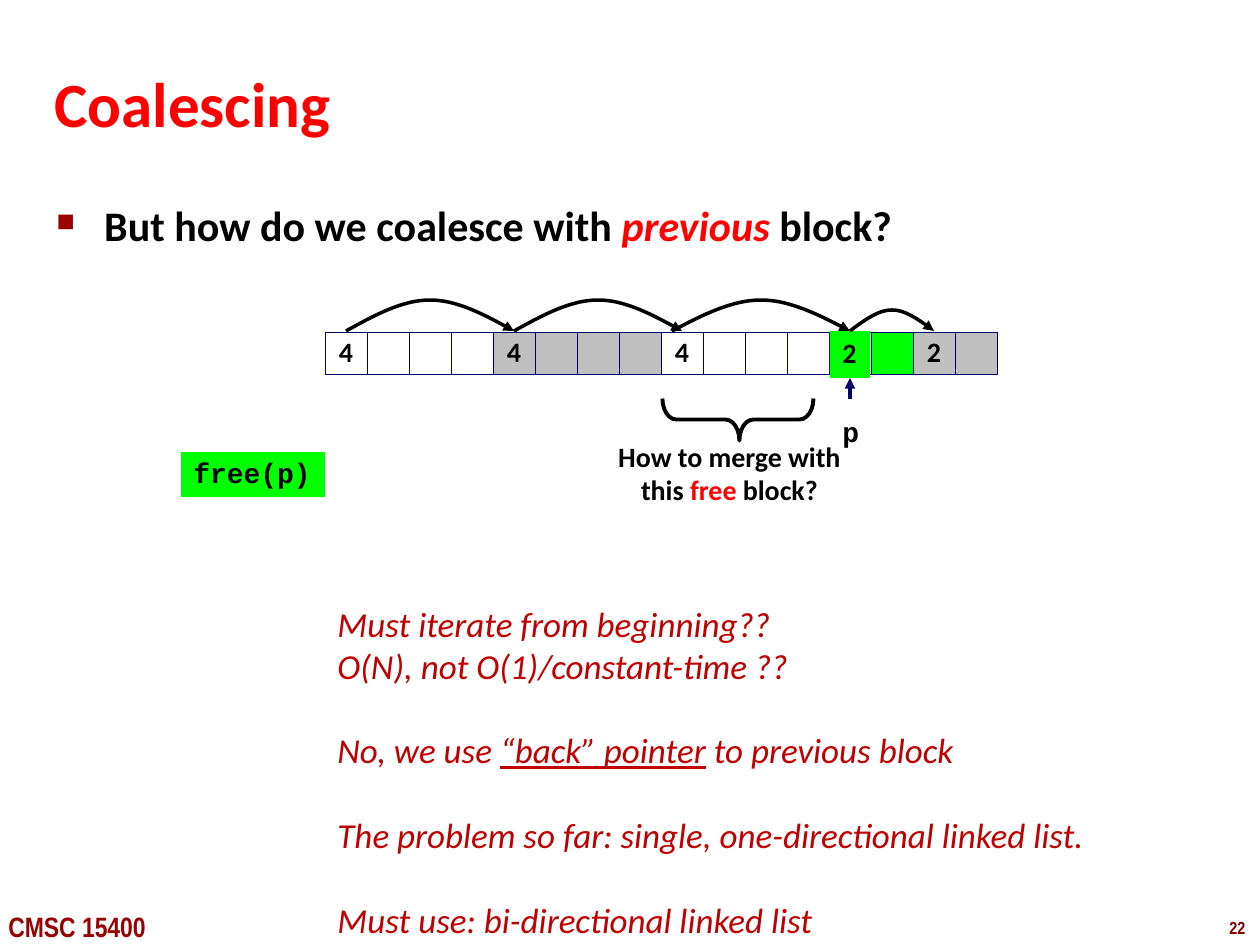
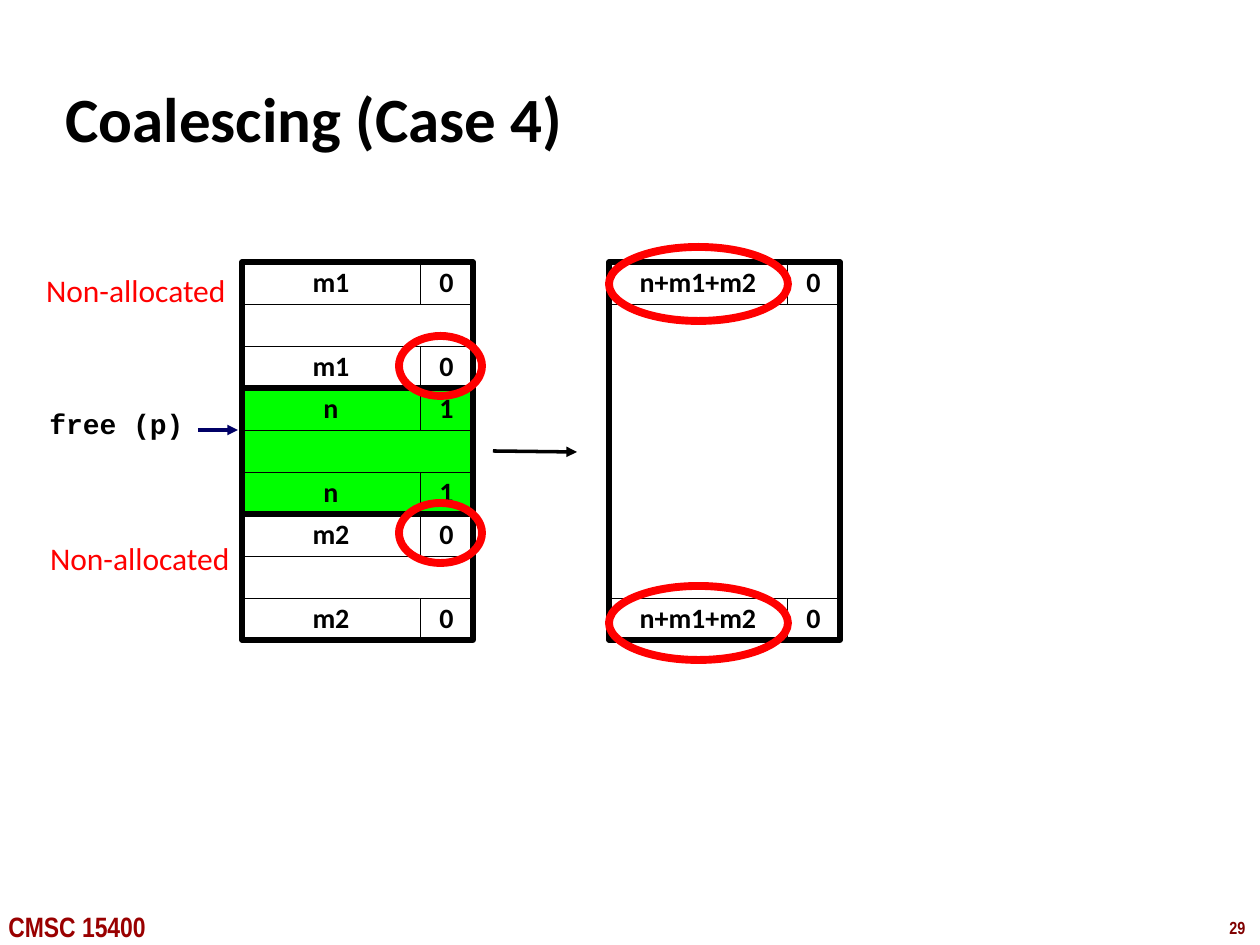
from typing import NamedTuple

from lxml import etree
from pptx import Presentation
from pptx import util as u
from pptx.dml.color import RGBColor
from pptx.enum import shapes as es
from pptx.enum import text as et
from pptx.oxml import ns

PX = u.Inches(1) / 126

BLACK = RGBColor(0, 0, 0)
WHITE = RGBColor(255, 255, 255)
RED = RGBColor(255, 0, 0)
GREEN = RGBColor(0, 255, 0)
GREY = RGBColor(0xBF, 0xBF, 0xBF)
SILVER = RGBColor(0xC0, 0xC0, 0xC0)
NAVY = RGBColor(0, 0, 0x66)
BRICK = RGBColor(0xC0, 0, 0)
MAROON = RGBColor(0x99, 0, 0)
WINE = RGBColor(0x80, 0, 0)

LEFT, MID, RIGHT = et.PP_ALIGN.LEFT, et.PP_ALIGN.CENTER, et.PP_ALIGN.RIGHT
RECT, OVAL = es.MSO_SHAPE.RECTANGLE, es.MSO_SHAPE.OVAL


class Box(NamedTuple):
    x: int
    y: int
    w: int
    h: int


class Style(NamedTuple):
    size: int
    font: str = "Calibri"
    color: RGBColor = BLACK
    bold: bool = False
    italic: bool = False
    under: bool = False


class Run(NamedTuple):
    text: str
    style: Style


class Para(NamedTuple):
    runs: list[Run]
    align: et.PP_ALIGN = LEFT
    pitch: float = 1.0
    before: float = 0


class Block(NamedTuple):
    size: int
    fill: RGBColor
    label: str = ""


class Arc(NamedTuple):
    start: int
    end: int
    top: int


class Chunk(NamedTuple):
    x: int
    y: int
    rows: int
    name: str
    flag: str
    fill: RGBColor = WHITE


HEAD = Style(36, bold=True)
LABEL = Style(16, bold=True)
CODE = Style(16, "Courier New", bold=True)
LEAD = Style(24, bold=True)
NOTE = Style(20, color=BRICK, italic=True)
STATE = Style(18, color=RED)
FOOT = Style(16, "Arial Narrow", MAROON, bold=True)
PAGE = Style(10, "Arial Narrow", WINE, bold=True)


def px(value: float) -> int:
    return round(value * PX)


def place(box: Box) -> list[int]:
    return [px(n) for n in box]


def write(shape, paras: list[Para], anchor=et.MSO_ANCHOR.TOP, wrap: bool = False) -> None:
    frame = shape.text_frame
    frame.word_wrap = wrap
    frame.vertical_anchor = anchor
    for i, para in enumerate(paras):
        line = frame.add_paragraph() if i else frame.paragraphs[0]
        line.alignment = para.align
        line.line_spacing = para.pitch
        if para.before:
            line.space_before = u.Pt(para.before)
        for text, style in para.runs:
            run = line.add_run()
            run.text = text
            font = run.font
            font.size, font.name = u.Pt(style.size), style.font
            font.color.rgb = style.color
            font.bold, font.italic = style.bold, style.italic
            font.underline = style.under


def label(slide, box: Box, paras: list[Para], **opts):
    shape = slide.shapes.add_textbox(*place(box))
    write(shape, paras, **opts)
    return shape


def one(text: str, style: Style, align=LEFT, pitch: float = 1.0) -> list[Para]:
    return [Para([Run(text, style)], align, pitch)]


def draw(slide, kind, box: Box, fill=None, line=None, width: float = 0.25):
    shape = slide.shapes.add_shape(kind, *place(box))
    shape.shadow.inherit = False
    if fill is None:
        shape.fill.background()
    else:
        shape.fill.solid()
        shape.fill.fore_color.rgb = fill
    if line is None:
        shape.line.fill.background()
    else:
        shape.line.color.rgb = line
        shape.line.width = u.Pt(width)
    return shape


def cell(slide, box: Box, fill: RGBColor, line: RGBColor, text: str = "") -> None:
    shape = draw(slide, RECT, box, fill, line)
    if text:
        write(shape, one(text, LABEL, MID, 0.98), anchor=et.MSO_ANCHOR.MIDDLE)


def tag(slide, box: Box, text: str, style: Style, pitch: float):
    shape = draw(slide, RECT, box, GREEN)
    write(shape, one(text, style, pitch=pitch))
    return shape


def point(shape, color: RGBColor) -> None:
    """Give a line its colour and an arrowhead at its end."""
    shape.line.color.rgb = color
    shape.line.width = u.Pt(2)
    ln = shape.line._get_or_add_ln()
    etree.SubElement(ln, ns.qn("a:tailEnd"), type="triangle")


def arrow(slide, x1: int, y1: int, x2: int, y2: int, color: RGBColor):
    ends = [px(n) for n in (x1, y1, x2, y2)]
    line = slide.shapes.add_connector(es.MSO_CONNECTOR.STRAIGHT, *ends)
    point(line, color)
    etree.SubElement(line._element.spPr, ns.qn("a:effectLst"))
    return line


def hop(slide, arc: Arc, base: int, steps: int = 16) -> None:
    """Draw a bell-shaped arrow from one block start to the next."""
    span, rise = arc.end - arc.start, base - arc.top
    dots = []
    for i in range(2 * steps + 1):
        t = i / steps
        s = min(t, 2 - t)
        lift = 1.5 * s * (1 - s) ** 2 + 3 * s * s * (1 - s) + s ** 3
        dots.append((px(arc.start + span * t / 2), px(base - rise * lift)))
    pen = slide.shapes.build_freeform(*dots[0])
    pen.add_line_segments(dots[1:], close=False)
    curve = pen.convert_to_shape()
    curve.shadow.inherit = False
    curve.fill.background()
    point(curve, BLACK)


def stack(slide, chunk: Chunk) -> None:
    """Draw a memory block with its header, payload, footer and outline."""
    wide, thin, row = 178, 53, 42
    x, y, rows, name, flag, fill = chunk
    last = y + (rows - 1) * row
    cell(slide, Box(x, y + row, wide + thin, last - y - row), fill, BLACK)
    for top in (y, last):
        cell(slide, Box(x, top, wide, row), fill, BLACK, name)
        cell(slide, Box(x + wide, top, thin, row), fill, BLACK, flag)
    draw(slide, RECT, Box(x, y, wide + thin, rows * row), line=BLACK, width=3)


def start(deck, title: str, box: Box, color: RGBColor, page: str):
    """Add a slide with its title and footer."""
    slide = deck.slides.add_slide(deck.slide_layouts[6])
    label(slide, Box(1217, 911, 43, 34), one(page, PAGE))
    label(slide, Box(-4, 903, 179, 47), one("CMSC 15400", FOOT))
    label(slide, box, one(title, HEAD._replace(color=color)),
          anchor=et.MSO_ANCHOR.MIDDLE, wrap=True)
    return slide


def bullet(shape) -> None:
    pad = u.Inches(0.38)
    props = shape.text_frame.paragraphs[0]._p.get_or_add_pPr()
    props.set("marL", str(pad))
    props.set("indent", str(-pad))
    tint = etree.SubElement(props, ns.qn("a:buClr"))
    etree.SubElement(tint, ns.qn("a:srgbClr"), val=str(MAROON))
    etree.SubElement(props, ns.qn("a:buSzPct"), val="60000")
    etree.SubElement(props, ns.qn("a:buChar"), char="■")


def previous(deck) -> None:
    slide = start(deck, "Coalescing", Box(42, 63, 932, 79), RED, "22")
    lead = [Run("But how do we coalesce with ", LEAD),
            Run("previous ", LEAD._replace(color=RED, italic=True)),
            Run("block?", LEAD)]
    bullet(label(slide, Box(44, 200, 1145, 110), [Para(lead, pitch=0.88)], wrap=True))

    side, x, y = 42, 325, 332
    blocks = [Block(4, WHITE, "4"), Block(4, GREY, "4"), Block(4, WHITE, "4"),
              Block(1, WHITE), Block(1, GREEN), Block(2, SILVER, "2")]
    for block in blocks:
        for i in range(block.size):
            text = "" if i else block.label
            cell(slide, Box(x, y, side, side), block.fill, NAVY, text)
            x += side

    freed = tag(slide, Box(830, 331, 40, 47), "2", LABEL, 0.98)
    for arc in (Arc(346, 514, 300), Arc(514, 682, 300),
                Arc(672, 850, 300), Arc(850, 934, 310)):
        hop(slide, arc, 331)
    tag(slide, Box(181, 452, 144, 45), "free(p)", CODE, 0.94)
    label(slide, Box(830, 411, 42, 45), one("p", CODE, pitch=0.94))
    arrow(slide, 850, 399, 850, 378, NAVY).end_connect(freed, 2)

    back = [Run("No, we use ", NOTE),
            Run("“back” pointer", NOTE._replace(under=True)),
            Run(" to previous block", NOTE)]
    gap = 24.4
    label(slide, Box(325, 596, 789, 352), [
        Para([Run("Must iterate from beginning??", NOTE)]),
        Para([Run("O(N), not O(1)/constant-time ??", NOTE)]),
        Para(back, before=gap),
        Para([Run("The problem so far: single, one-directional linked list.", NOTE)],
             before=gap),
        Para([Run("Must use: bi-directional linked list", NOTE)], before=gap)])

    ask = [Run("this ", LABEL), Run("free", LABEL._replace(color=RED)),
           Run(" block?", LABEL)]
    label(slide, Box(604, 435, 251, 79),
          one("How to merge with", LABEL, MID, 0.98) + [Para(ask, MID, 0.98)])
    brace = draw(slide, es.MSO_SHAPE.LEFT_BRACE, Box(717, 344, 42, 151),
                 line=BLACK, width=2.25)
    brace.rotation = 270
    brace.adjustments[0], brace.adjustments[1] = 0.33, 0.51


def merge(deck) -> None:
    slide = start(deck, "Coalescing (Case 4)", Box(53, 78, 1155, 79), BLACK, "29")
    top = 262
    for chunk in (Chunk(242, top, 3, "m1", "0"),
                  Chunk(242, top + 126, 3, "n", "1", GREEN),
                  Chunk(242, top + 252, 3, "m2", "0"),
                  Chunk(609, top, 9, "n+m1+m2", "0")):
        stack(slide, chunk)
    arrow(slide, 493, 451, 577, 452, BLACK)
    arrow(slide, 198, 430, 238, 430, NAVY)
    for box in (Box(20, 265, 218, 89), Box(33, 533, 209, 50)):
        label(slide, box, one("Non-allocated", STATE, RIGHT))
    label(slide, Box(37, 403, 161, 45), one("free (p)", CODE, pitch=0.94))
    for ring in (Box(609, 247, 179, 74), Box(609, 586, 179, 74),
                 Box(399, 336, 83, 60), Box(399, 503, 83, 60)):
        draw(slide, OVAL, ring, line=RED, width=4.5)


def main() -> None:
    deck = Presentation()
    deck.slide_width, deck.slide_height = px(1260), px(945)
    previous(deck)
    merge(deck)
    deck.save("out.pptx")


if __name__ == "__main__":
    main()
